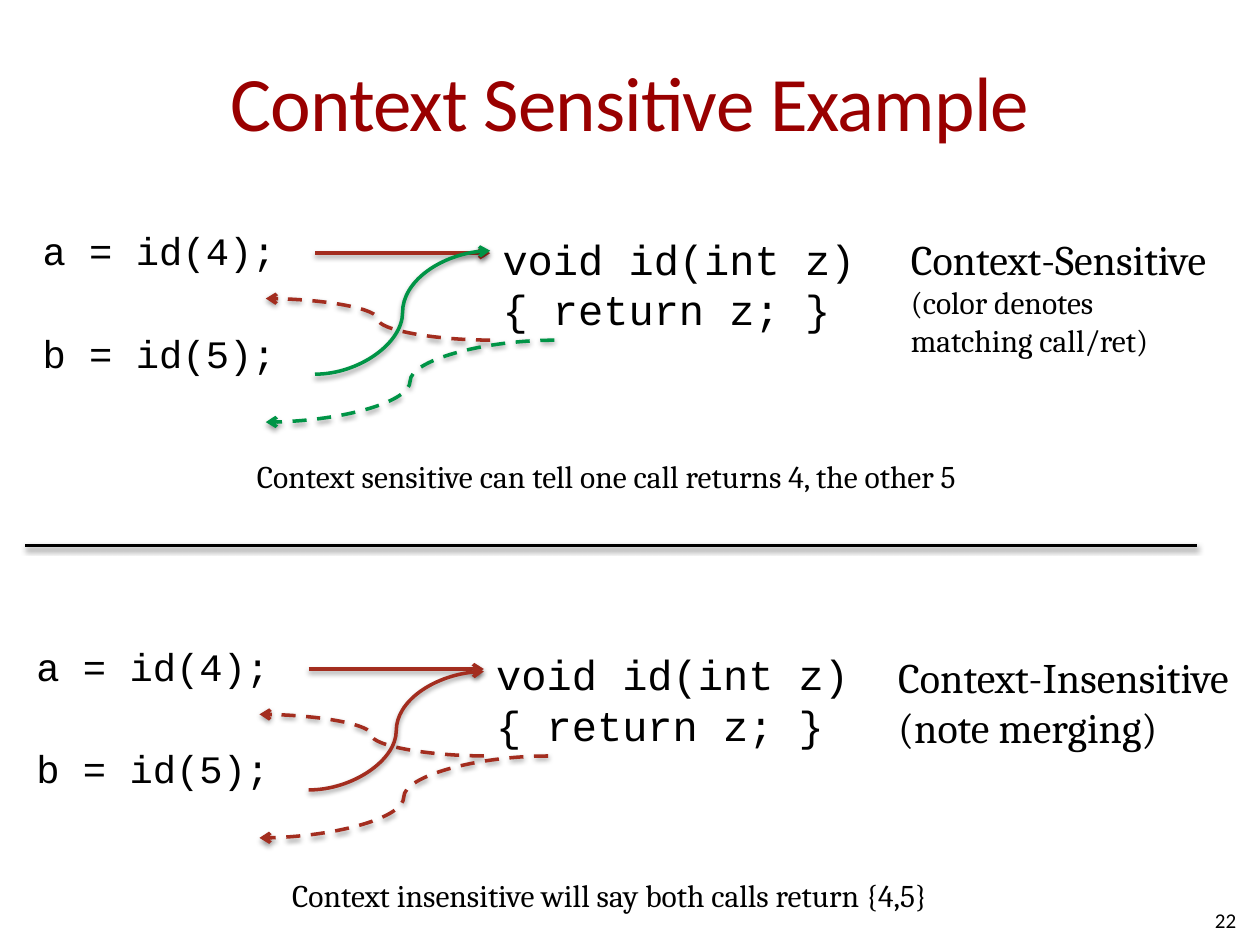
from dataclasses import dataclass

from lxml import etree
from pptx import Presentation
from pptx.dml.color import RGBColor
from pptx.enum.dml import MSO_LINE
from pptx.enum.shapes import MSO_CONNECTOR
from pptx.enum.text import MSO_ANCHOR, PP_ALIGN
from pptx.oxml.ns import qn
from pptx.util import Inches, Pt

STRAIGHT, CURVE = MSO_CONNECTOR.STRAIGHT, MSO_CONNECTOR.CURVE
LEFT, CENTER, RIGHT = PP_ALIGN.LEFT, PP_ALIGN.CENTER, PP_ALIGN.RIGHT
TOP, MIDDLE = MSO_ANCHOR.TOP, MSO_ANCHOR.MIDDLE
DASH = MSO_LINE.DASH
RED, GREEN, BLACK, TITLE_RED = "A32D1F", "009446", "000000", "990000"
CODE, SERIF, SANS = "Courier New", "Cambria", "Calibri"


@dataclass
class Line:
    text: str
    size: float
    before: float = 0


@dataclass
class Panel:
    dx: float
    dy: float
    second_color: str
    second_end: float
    label_box: tuple[float, float, float, float]
    label: list[Line]
    note_box: tuple[float, float, float, float]
    note: str


PANELS = [
    Panel(0, 0, GREEN, 1.99, (7.13, 1.8, 2.72, 1.11),
          [Line("Context-Sensitive", 24), Line("(color denotes", 18),
           Line("matching call/ret)", 18)],
          (1.94, 3.58, 6.11, 0.4),
          "Context sensitive can tell one call returns 4, the other 5"),
    Panel(-0.05, 3.3, RED, 2.03, (7.03, 5.12, 2.83, 0.91),
          [Line("Context-Insensitive", 24), Line("(note merging)", 24)],
          (2.22, 6.9, 5.56, 0.4),
          "Context insensitive will say both calls return {4,5}"),
]


def rgb(color: str) -> RGBColor:
    return RGBColor.from_string(color)


def add_text(s, box: tuple, lines: list[Line], font: str, color: str = BLACK,
             align=LEFT, anchor=TOP, wrap: bool = False, spacing: int = 0):
    sp = s.shapes.add_textbox(*map(Inches, box))
    tf = sp.text_frame
    tf.word_wrap = wrap
    tf.vertical_anchor = anchor
    for i, line in enumerate(lines):
        p = tf.add_paragraph() if i else tf.paragraphs[0]
        p.alignment = align
        p.space_before = Pt(line.before)
        r = p.add_run()
        r.text = line.text
        r.font.size = Pt(line.size)
        r.font.name = font
        r.font.color.rgb = rgb(color)
        if spacing:
            r.font._element.set("spc", str(spacing))
    return sp


def add_line(s, kind, start: tuple, end: tuple, color: str,
             dash=None, arrow: bool = True):
    c = s.shapes.add_connector(kind, *map(Inches, start + end))
    c.line.color.rgb = rgb(color)
    c.line.width = Pt(2)
    if dash:
        c.line.dash_style = dash
    if arrow:
        etree.SubElement(c.line._get_or_add_ln(), qn("a:tailEnd"), type="arrow")
    # Soft shadow below the line
    effects = etree.SubElement(c._element.spPr, qn("a:effectLst"))
    shadow = etree.SubElement(effects, qn("a:outerShdw"), blurRad=str(Pt(3.1)),
                              dist=str(Pt(1.6)), dir="5400000", rotWithShape="0")
    tint = etree.SubElement(shadow, qn("a:srgbClr"), val=BLACK)
    etree.SubElement(tint, qn("a:alpha"), val="38000")
    return c


def add_panel(s, panel: Panel):
    def at(x: float, y: float) -> tuple[float, float]:
        return x + panel.dx, y + panel.dy

    # Calls and callee
    add_text(s, at(0.24, 1.75) + (2.52, 1.22),
             [Line("a = id(4);", 22.2), Line("b = id(5);", 22.2, 32)],
             CODE, wrap=True)
    add_text(s, at(3.89, 1.8) + (3.03, 0.91),
             [Line("void id(int z)", 24), Line("{ return z; }", 24)], CODE)

    # Solid call arrows and dashed return arrows
    second = panel.second_color
    add_line(s, CURVE, at(2.5, 2.01), at(3.89, 2.01), RED)
    add_line(s, CURVE, at(3.89, 2.7), at(2.11, 2.37), RED, DASH)
    add_line(s, CURVE, at(2.5, 2.97), at(3.89, panel.second_end), second)
    add_line(s, CURVE, at(4.4, 2.7), at(2.11, 3.35), second, DASH)

    # Label and conclusion
    add_text(s, panel.label_box, panel.label, SERIF)
    add_text(s, panel.note_box, [Line(panel.note, 18)], SERIF)


def main():
    prs = Presentation()
    prs.slide_width, prs.slide_height = Inches(10), Inches(7.5)
    s = prs.slides.add_slide(prs.slide_layouts[6])

    # Title
    add_text(s, (0.5, 0.17, 9, 1.25), [Line("Context Sensitive Example", 44)],
             SANS, TITLE_RED, CENTER, MIDDLE, wrap=True, spacing=-50)

    # Both analyses, with a divider between them
    for panel in PANELS:
        add_panel(s, panel)
    add_line(s, STRAIGHT, (0.2, 4.33), (9.5, 4.33), BLACK, arrow=False)

    # Slide number
    add_text(s, (7.58, 7.1, 2.33, 0.4), [Line("22", 12)], SANS,
             align=RIGHT, anchor=MIDDLE, wrap=True)
    prs.save("out.pptx")


if __name__ == "__main__":
    main()
